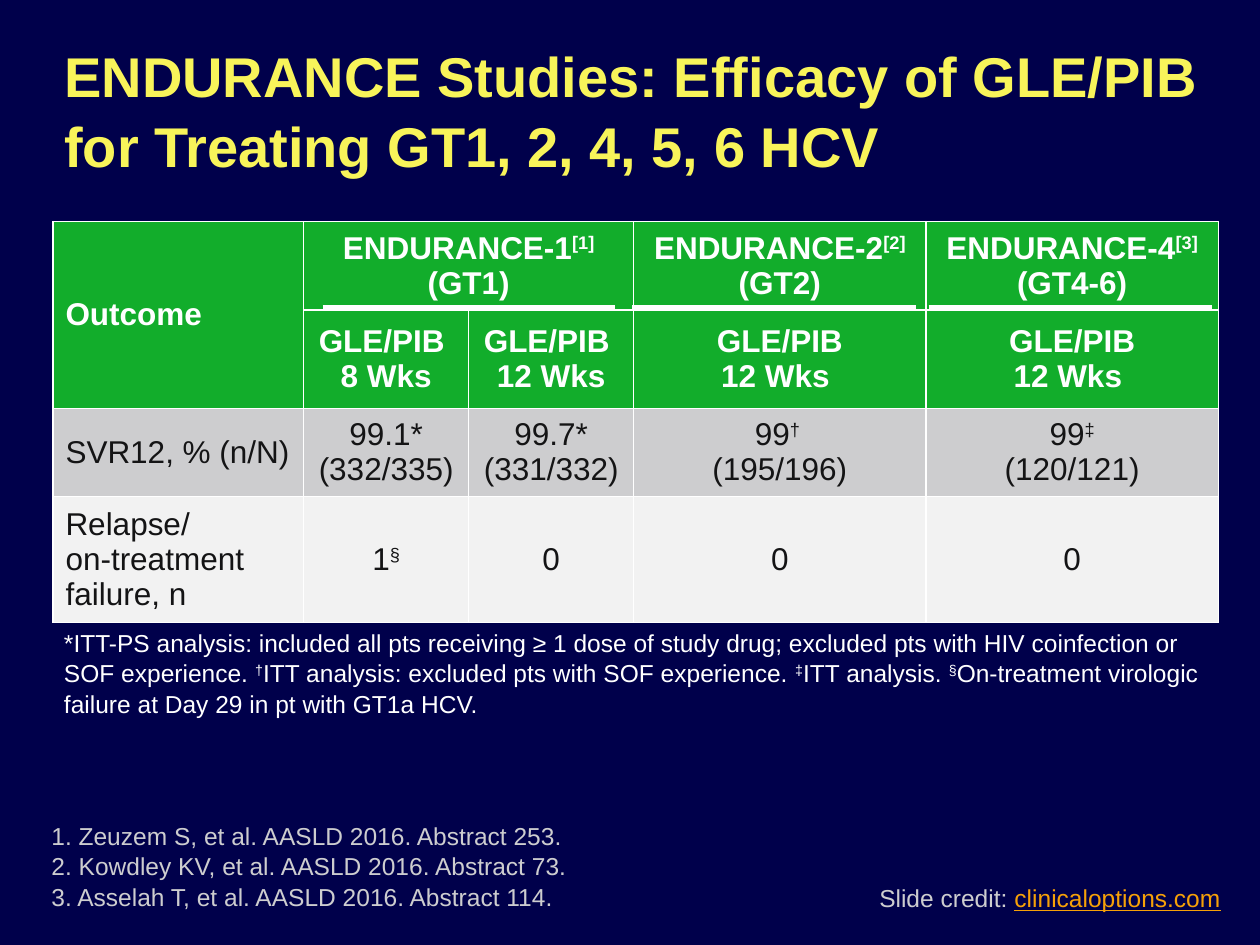
from lxml.etree import SubElement
from pptx import Presentation
from pptx.dml.color import RGBColor
from pptx.enum.shapes import MSO_CONNECTOR as Connector
from pptx.enum.text import MSO_ANCHOR as Anchor, MSO_AUTO_SIZE as AutoSize, PP_ALIGN as Align
from pptx.oxml.ns import qn
from pptx.util import Inches, Pt

NAVY = RGBColor(0x00, 0x00, 0x4B)
YELLOW = RGBColor(0xF8, 0xF4, 0x5A)
ORANGE = RGBColor(0xF6, 0xA1, 0x08)
GREEN = RGBColor(0x12, 0xAD, 0x2B)
WHITE = RGBColor(0xFF, 0xFF, 0xFF)
SILVER = RGBColor(0xCD, 0xCD, 0xCF)
PALE = RGBColor(0xF2, 0xF2, 0xF2)
INK = RGBColor(0x14, 0x14, 0x15)

COLUMN_WIDTHS = [1.99, 1.31, 1.31, 2.32, 2.32]
ROW_HEIGHTS = [0.7, 0.78, 0.7, 1]
ROW_FILLS = [GREEN, GREEN, SILVER, PALE]
HEADER_ROWS = 2
# ^...^ is superscript, \v a line break, \n a new paragraph; None is a merged cell.
OUTCOMES = [
    ["Outcome", "ENDURANCE-1^[1]^\n(GT1)", None,
     "ENDURANCE-2^[2]^\n(GT2)", "ENDURANCE-4^[3]^\n(GT4-6)"],
    [None, "GLE/PIB \v8 Wks", "GLE/PIB \v12 Wks", "GLE/PIB\n12 Wks ", "GLE/PIB\n12 Wks "],
    ["SVR12, % (n/N)", "99.1* (332/335)", "99.7* (331/332)",
     "99^† ^\v(195/196)", "99^‡^\n(120/121)"],
    ["Relapse/\von-treatment \vfailure, n", "1^§^", "0", "0", "0"],
]
MERGES = [((0, 0), (1, 0)), ((0, 1), (0, 2))]
RULES = [(2.56, 4.88), (5.02, 7.27), (7.37, 9.62)]
RULE_TOP = 2.44

REFERENCES = "\v".join([
    "1. Zeuzem S, et al. AASLD 2016. Abstract 253.",
    "2. Kowdley KV, et al. AASLD 2016. Abstract 73.",
    "3. Asselah T, et al. AASLD 2016. Abstract 114.",
])
FOOTNOTE = (
    "*ITT-PS analysis: included all pts receiving ≥ 1 dose of study drug; excluded pts "
    "with HIV coinfection or SOF experience. ^†^ITT analysis: excluded pts with SOF "
    "experience. ^‡^ITT analysis. ^§^On-treatment virologic failure at Day 29 in pt "
    "with GT1a HCV."
)


class SlideBuilder:
    def __init__(self, page, font_name):
        self.page = page
        self.font_name = font_name

    def add_span(self, para, text, raised=False, **style):
        span = para.add_run()
        span.text = text
        for name, value in {"name": self.font_name, **style}.items():
            if name == "color":
                span.font.color.rgb = value
            else:
                setattr(span.font, name, value)
        if raised:
            span._r.get_or_add_rPr().set("baseline", "30000")

    def fill_text(self, frame, text, align=Align.LEFT, spacing=None, **style):
        """Fill a text frame from marked-up text and return its last paragraph."""
        for index, line in enumerate(text.split("\n")):
            para = frame.add_paragraph() if index else frame.paragraphs[0]
            para.alignment = align
            para.line_spacing = spacing
            for row, part in enumerate(line.split("\v")):
                if row:
                    para.add_line_break()
                for order, piece in enumerate(part.split("^")):
                    if piece:
                        self.add_span(para, piece, raised=order % 2 == 1, **style)
        return para

    def title(self, text, left, top, width, height, **style):
        box = self.page.shapes.title
        box.left, box.top, box.width, box.height = map(Inches, (left, top, width, height))
        frame = box.text_frame
        frame.word_wrap = True
        frame.auto_size = AutoSize.NONE
        frame.vertical_anchor = Anchor.MIDDLE
        self.fill_text(frame, text, spacing=1.04, **style)

    def text(self, text, left, top, width, height, wrap=True, anchor=Anchor.BOTTOM, **style):
        box = self.page.shapes.add_textbox(*map(Inches, (left, top, width, height)))
        frame = box.text_frame
        frame.word_wrap = wrap
        frame.vertical_anchor = anchor
        return self.fill_text(frame, text, spacing=1.04, size=Pt(14), **style)

    def table(self, rows, left, top):
        shape = self.page.shapes.add_table(
            len(ROW_HEIGHTS), len(COLUMN_WIDTHS), Inches(left), Inches(top),
            Inches(sum(COLUMN_WIDTHS)), Inches(sum(ROW_HEIGHTS)))
        table = shape.table
        for column, width in zip(table.columns, COLUMN_WIDTHS):
            column.width = Inches(width)
        for row, height in zip(table.rows, ROW_HEIGHTS):
            row.height = Inches(height)
        for first, last in MERGES:
            table.cell(*first).merge(table.cell(*last))
        for row, texts in enumerate(rows):
            header = row < HEADER_ROWS
            for column, text in enumerate(texts):
                cell = table.cell(row, column)
                cell.fill.solid()
                cell.fill.fore_color.rgb = ROW_FILLS[row]
                cell.vertical_anchor = Anchor.MIDDLE
                if text:
                    self.fill_text(cell.text_frame, text, Align.CENTER if column else Align.LEFT,
                                   size=Pt(18), bold=header, color=WHITE if header else INK)

    def rule(self, start, end, top):
        line = self.page.shapes.add_connector(
            Connector.STRAIGHT, Inches(start), Inches(top), Inches(end), Inches(top))
        line.line.color.rgb = WHITE
        line.line.width = Pt(2.25)
        SubElement(line._element.spPr, qn("a:effectLst"))


def main():
    deck = Presentation()
    deck.slide_width, deck.slide_height = Inches(10), Inches(7.5)
    page = deck.slides.add_slide(deck.slide_layouts[5])
    page.background.fill.solid()
    page.background.fill.fore_color.rgb = NAVY

    builder = SlideBuilder(page, "Arial")
    credit = builder.text("Slide credit: ", 6.88, 6.95, 2.92, 0.34,
                          wrap=False, anchor=Anchor.TOP, color=SILVER)
    builder.add_span(credit, "clinicaloptions.com", size=Pt(14), color=ORANGE, underline=True)
    builder.title("ENDURANCE Studies: Efficacy of GLE/PIB for Treating GT1, 2, 4, 5, 6 HCV",
                  0.41, 0.26, 9.23, 1.21, size=Pt(32), bold=True, color=YELLOW)
    builder.text(REFERENCES, 0.31, 6.47, 6.57, 0.81, color=SILVER)
    builder.text(FOOTNOTE, 0.41, 4.94, 9.33, 0.81, color=WHITE)
    builder.table(OUTCOMES, 0.42, 1.76)
    for start, end in RULES:
        builder.rule(start, end, RULE_TOP)
    deck.save("out.pptx")


if __name__ == "__main__":
    main()
